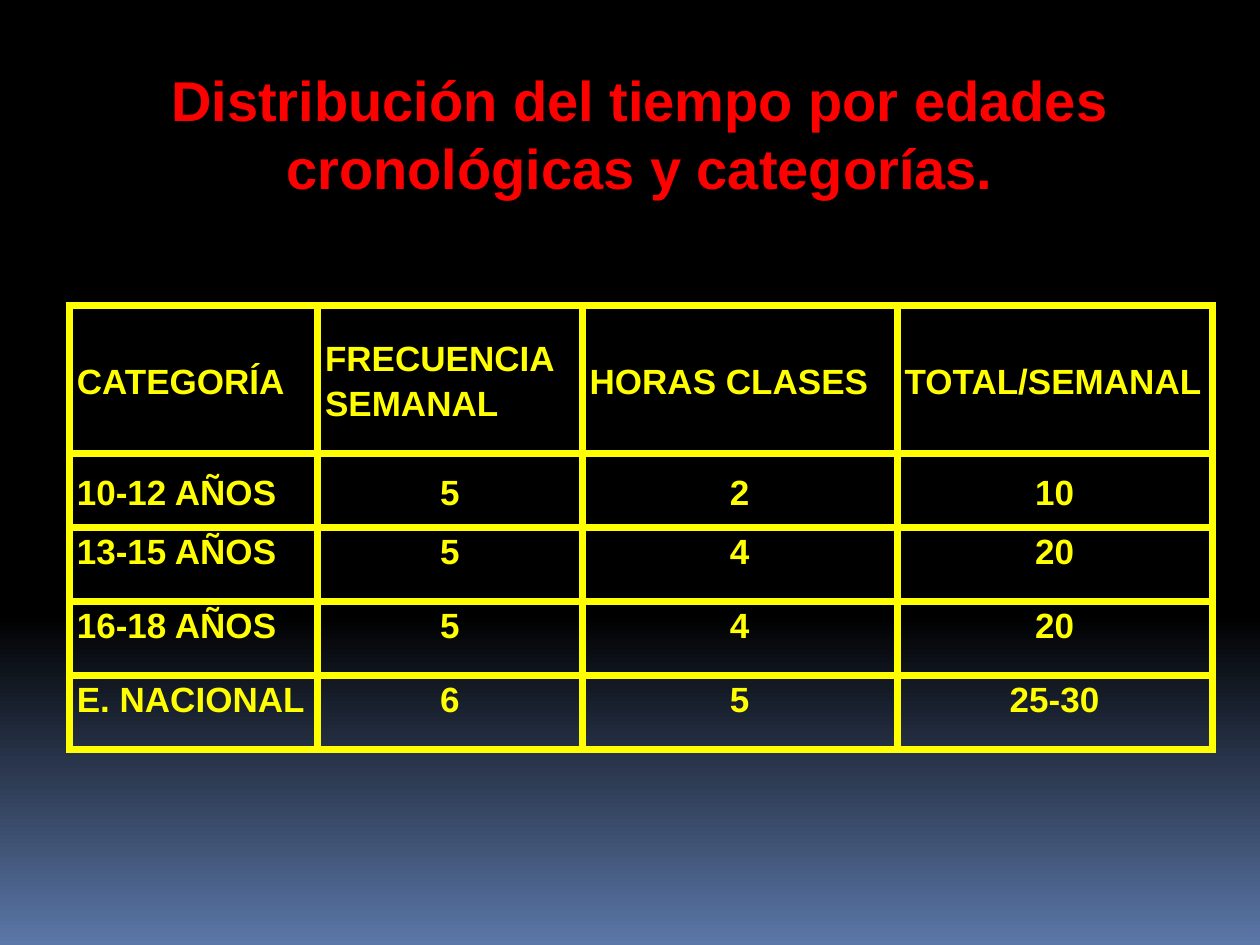
from lxml.etree import SubElement
from pptx import Presentation
from pptx.dml.color import RGBColor
from pptx.enum.text import MSO_ANCHOR as Anchor, MSO_AUTO_SIZE as AutoSize, PP_ALIGN as Align
from pptx.oxml.ns import qn
from pptx.util import Inches, Pt

WIDTH, HEIGHT = Inches(10), Inches(7.5)
COLORS = {"night": "000000", "horizon": "5B77A8", "title": "FF0000", "table": "FFFF00"}
TITLE = "Distribución del tiempo por edades cronológicas y categorías."
TITLE_BOX = (0.039, 0.063, 0.938, 0.156)
TABLE_BOX = (0.055, 0.323, 0.907, 0.47)
COLUMN_WEIGHTS = (1.97, 2.1, 2.5, 2.5)
ROW_WEIGHTS = (2, 1, 1, 1, 1)
ROWS = (
    ("CATEGORÍA", "FRECUENCIA SEMANAL", "HORAS CLASES", "TOTAL/SEMANAL"),
    ("10-12 AÑOS", "5", "2", "10"),
    ("13-15 AÑOS", "5", "4", "20"),
    ("16-18 AÑOS", "5", "4", "20"),
    ("E. NACIONAL", "6", "5", "25-30"),
)


def color(name):
    """Return the named palette colour."""
    return RGBColor.from_string(COLORS[name])


def scale(box):
    """Turn shares of the slide into left, top, width and height."""
    return [int(share * side) for share, side in zip(box, (WIDTH, HEIGHT) * 2)]


def format_paragraph(paragraph, size, name, alignment):
    """Apply bold Arial in a palette colour."""
    paragraph.alignment = alignment
    font = paragraph.font
    font.name, font.size, font.bold = "Arial", Pt(size), True
    font.color.rgb = color(name)


def paint_background(slide):
    """Fade from black down to blue over the lower third."""
    fill = slide.background.fill
    fill.gradient()
    fill.gradient_angle = 270
    for stop, position, name in zip(fill.gradient_stops, (0.65, 1), ("night", "horizon")):
        stop.position = position
        stop.color.rgb = color(name)


def place_title(slide, box):
    """Move and format the title placeholder."""
    title = slide.shapes.title
    title.left, title.top, title.width, title.height = scale(box)
    frame = title.text_frame
    frame.text = TITLE
    frame.auto_size = AutoSize.NONE
    frame.vertical_anchor = Anchor.TOP
    format_paragraph(frame.paragraphs[0], 32, "title", Align.CENTER)


def add_borders(cell):
    """Draw a thick line on all four sides of a cell."""
    properties = cell._tc.get_or_add_tcPr()
    for side in ("lnL", "lnR", "lnT", "lnB"):
        line = SubElement(properties, qn(f"a:{side}"), w=str(Pt(4.5)))
        fill = SubElement(line, qn("a:solidFill"))
        SubElement(fill, qn("a:srgbClr"), val=COLORS["table"])


def format_cell(cell, text, row, column):
    """Write one cell; counts are centred, the first two rows sit in the middle."""
    cell.text = text
    add_borders(cell)
    cell.fill.background()
    cell.margin_left = cell.margin_right = Inches(0.06)
    cell.margin_top = cell.margin_bottom = 0
    cell.vertical_anchor = Anchor.MIDDLE if row < 2 else Anchor.TOP
    paragraph = cell.text_frame.paragraphs[0]
    paragraph.line_spacing = 1.15
    format_paragraph(paragraph, 20, "table", Align.CENTER if row and column else Align.LEFT)


def place_table(slide, box):
    """Add the schedule table with weighted columns and rows."""
    left, top, width, height = scale(box)
    table = slide.shapes.add_table(len(ROWS), len(COLUMN_WEIGHTS), left, top, width, height).table
    for column, weight in zip(table.columns, COLUMN_WEIGHTS):
        column.width = int(width * weight / sum(COLUMN_WEIGHTS))
    for row, weight in zip(table.rows, ROW_WEIGHTS):
        row.height = int(height * weight / sum(ROW_WEIGHTS))
    for row, texts in enumerate(ROWS):
        for column, text in enumerate(texts):
            format_cell(table.cell(row, column), text, row, column)


def main():
    """Build and save the presentation."""
    presentation = Presentation()
    presentation.slide_width, presentation.slide_height = WIDTH, HEIGHT
    slide = presentation.slides.add_slide(presentation.slide_layouts.get_by_name("Title Only"))
    paint_background(slide)
    place_title(slide, TITLE_BOX)
    place_table(slide, TABLE_BOX)
    presentation.save("out.pptx")


if __name__ == "__main__":
    main()
